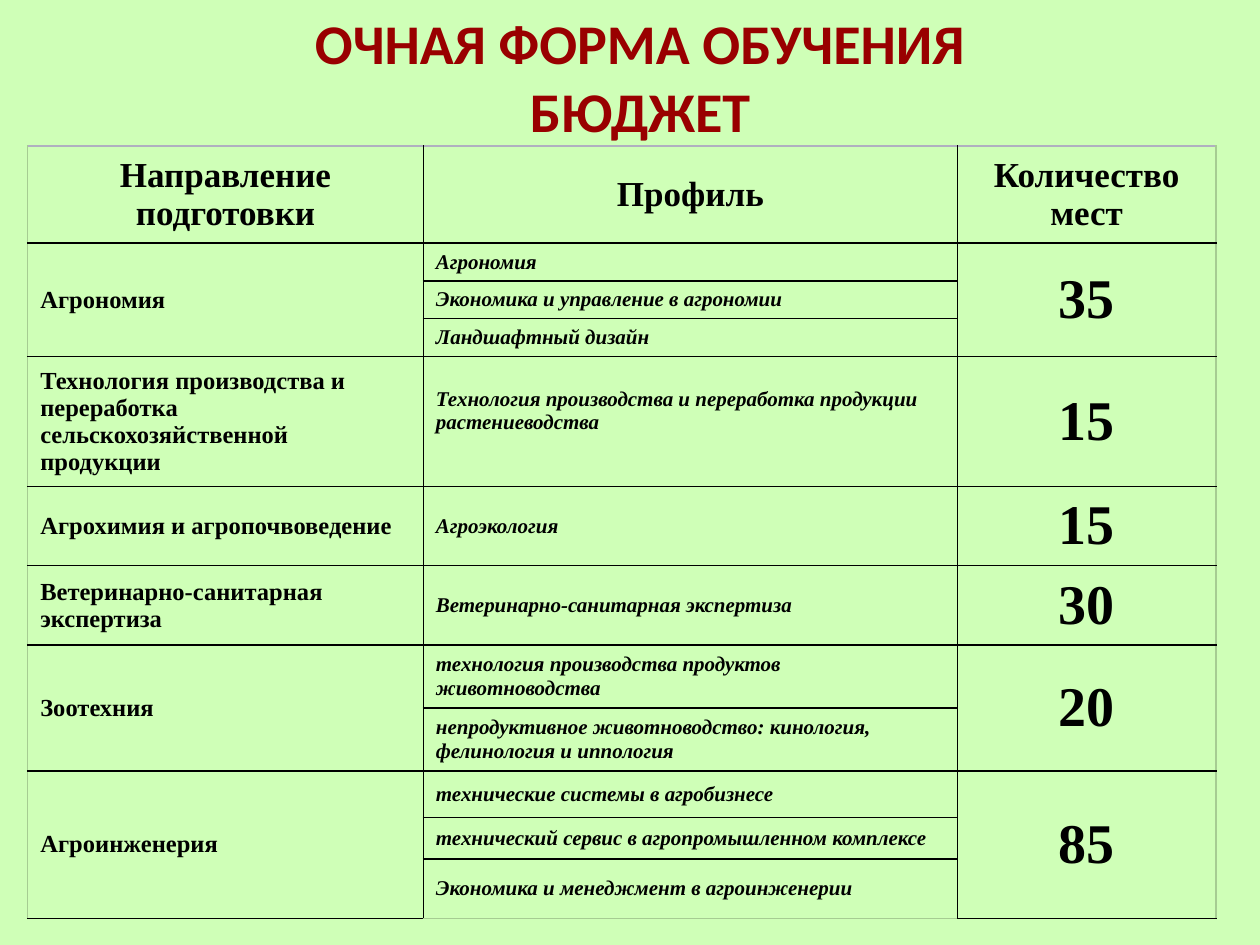
from dataclasses import dataclass

from lxml import etree
from pptx import Presentation
from pptx.dml.color import RGBColor
from pptx.enum.text import MSO_ANCHOR, MSO_AUTO_SIZE, PP_ALIGN
from pptx.oxml.ns import qn
from pptx.util import Inches, Pt

MIDDLE = MSO_ANCHOR.MIDDLE
TOP = MSO_ANCHOR.TOP
CENTER = PP_ALIGN.CENTER
LEFT = PP_ALIGN.LEFT
NO_AUTOFIT = MSO_AUTO_SIZE.NONE
TITLE_ONLY = 5


@dataclass(frozen=True)
class Theme:
    background: str = "CFFFB7"
    title: str = "990000"
    text: str = "000000"
    inner_line: str = "000000"
    outer_line: str = "A6CC92"
    top_line: str = "B0B0C0"
    title_font: str = "Calibri"
    table_font: str = "Times New Roman"
    title_size: int = 32
    header_size: int = 20
    field_size: int = 14
    profile_size: int = 12
    places_size: int = 32
    line_width: float = 1
    header_line_width: float = 1.5


THEME = Theme()
SLIDE_SIZE = (10, 7.5)
TITLE_BOX = (0.67, 0.02, 8.82, 1.18)
TABLE_BOX = (0.22, 1.16, 9.43, 6.13)
COLUMN_WIDTHS = (3.14, 4.24, 2.05)
HEADER_HEIGHT = 0.77
RAISED_MARGIN = 0.22

TITLE_LINES = ("ОЧНАЯ ФОРМА ОБУЧЕНИЯ", "БЮДЖЕТ")
HEADERS = ("Направление подготовки", "Профиль", "Количество мест")
PROGRAMMES = (
    ("Агрономия", "35", (
        ("Агрономия", 0.3),
        ("Экономика и управление в агрономии", 0.3),
        ("Ландшафтный дизайн", 0.3))),
    ("Технология производства и переработка сельскохозяйственной продукции", "15", (
        ("Технология производства и переработка продукции растениеводства", 1.03),)),
    ("Агрохимия и агропочвоведение", "15", (("Агроэкология", 0.63),)),
    ("Ветеринарно-санитарная экспертиза", "30", (
        ("Ветеринарно-санитарная экспертиза", 0.63),)),
    ("Зоотехния", "20", (
        ("технология производства продуктов животноводства", 0.5),
        ("непродуктивное животноводство: кинология, фелинология и иппология", 0.5))),
    ("Агроинженерия", "85", (
        ("технические системы в агробизнесе", 0.37),
        ("технический сервис в агропромышленном комплексе", 0.33),
        ("Экономика и менеджмент в агроинженерии", 0.47))),
)
RAISED_PROFILE = PROGRAMMES[1][2][0][0]


def add_run(paragraph, text, font_name, size, color, italic=False):
    run = paragraph.add_run()
    run.text = text
    run.font.name = font_name
    run.font.size = Pt(size)
    run.font.bold = True
    run.font.italic = italic
    run.font.color.rgb = RGBColor.from_string(color)


def write_cell(cell, text, size, alignment=LEFT, italic=False):
    cell.vertical_anchor = MIDDLE
    paragraph = cell.text_frame.paragraphs[0]
    paragraph.alignment = alignment
    add_run(paragraph, text, THEME.table_font, size, THEME.text, italic)


def add_border(cell, side, color, width):
    properties = cell._tc.get_or_add_tcPr()
    line = etree.SubElement(properties, qn(f"a:ln{side}"), w=str(Pt(width)))
    fill = etree.SubElement(line, qn("a:solidFill"))
    etree.SubElement(fill, qn("a:srgbClr"), val=color)


def style_cells(table):
    last_row = len(table.rows) - 1
    last_column = len(table.columns) - 1
    for row_index, row in enumerate(table.rows):
        for column_index, cell in enumerate(row.cells):
            outer_sides = {
                "L": column_index == 0,
                "R": column_index == last_column,
                "T": row_index == 0,
                "B": row_index == last_row,
            }
            header_sides = {(0, "B"), (1, "T")}
            for side, is_outer in outer_sides.items():
                outer_color = THEME.top_line if side == "T" else THEME.outer_line
                is_header_edge = (row_index, side) in header_sides
                add_border(cell, side,
                           outer_color if is_outer else THEME.inner_line,
                           THEME.header_line_width if is_header_edge else THEME.line_width)
            cell.fill.background()


def place_title(slide, box):
    title = slide.shapes.title
    title.left, title.top, title.width, title.height = map(Inches, box)
    frame = title.text_frame
    frame.word_wrap = True
    frame.auto_size = NO_AUTOFIT
    frame.vertical_anchor = TOP
    for index, text in enumerate(TITLE_LINES):
        paragraph = frame.add_paragraph() if index else frame.paragraphs[0]
        paragraph.alignment = CENTER
        add_run(paragraph, text, THEME.title_font, THEME.title_size, THEME.title)


def place_table(slide, box):
    heights = [HEADER_HEIGHT] + [
        height for _, _, profiles in PROGRAMMES for _, height in profiles]
    frame = slide.shapes.add_table(len(heights), len(HEADERS), *map(Inches, box))
    table = frame.table
    table.first_row = False
    table.horz_banding = False
    for column, width in zip(table.columns, COLUMN_WIDTHS):
        column.width = Inches(width)
    for row, height in zip(table.rows, heights):
        row.height = Inches(height)
    style_cells(table)

    for column_index, text in enumerate(HEADERS):
        write_cell(table.cell(0, column_index), text, THEME.header_size, CENTER)

    first = 1
    for field, places, profiles in PROGRAMMES:
        last = first + len(profiles) - 1
        if last > first:
            for column_index in (0, 2):
                table.cell(first, column_index).merge(table.cell(last, column_index))
        write_cell(table.cell(first, 0), field, THEME.field_size)
        write_cell(table.cell(first, 2), places, THEME.places_size, CENTER)
        for row_index, (profile, _) in enumerate(profiles, first):
            cell = table.cell(row_index, 1)
            write_cell(cell, profile, THEME.profile_size, italic=True)
            if profile == RAISED_PROFILE:
                cell.margin_bottom = Inches(RAISED_MARGIN)
        first = last + 1


def main():
    presentation = Presentation()
    presentation.slide_width, presentation.slide_height = map(Inches, SLIDE_SIZE)
    slide = presentation.slides.add_slide(presentation.slide_layouts[TITLE_ONLY])
    background = slide.background.fill
    background.solid()
    background.fore_color.rgb = RGBColor.from_string(THEME.background)
    place_title(slide, TITLE_BOX)
    place_table(slide, TABLE_BOX)
    presentation.save("out.pptx")


if __name__ == "__main__":
    main()
